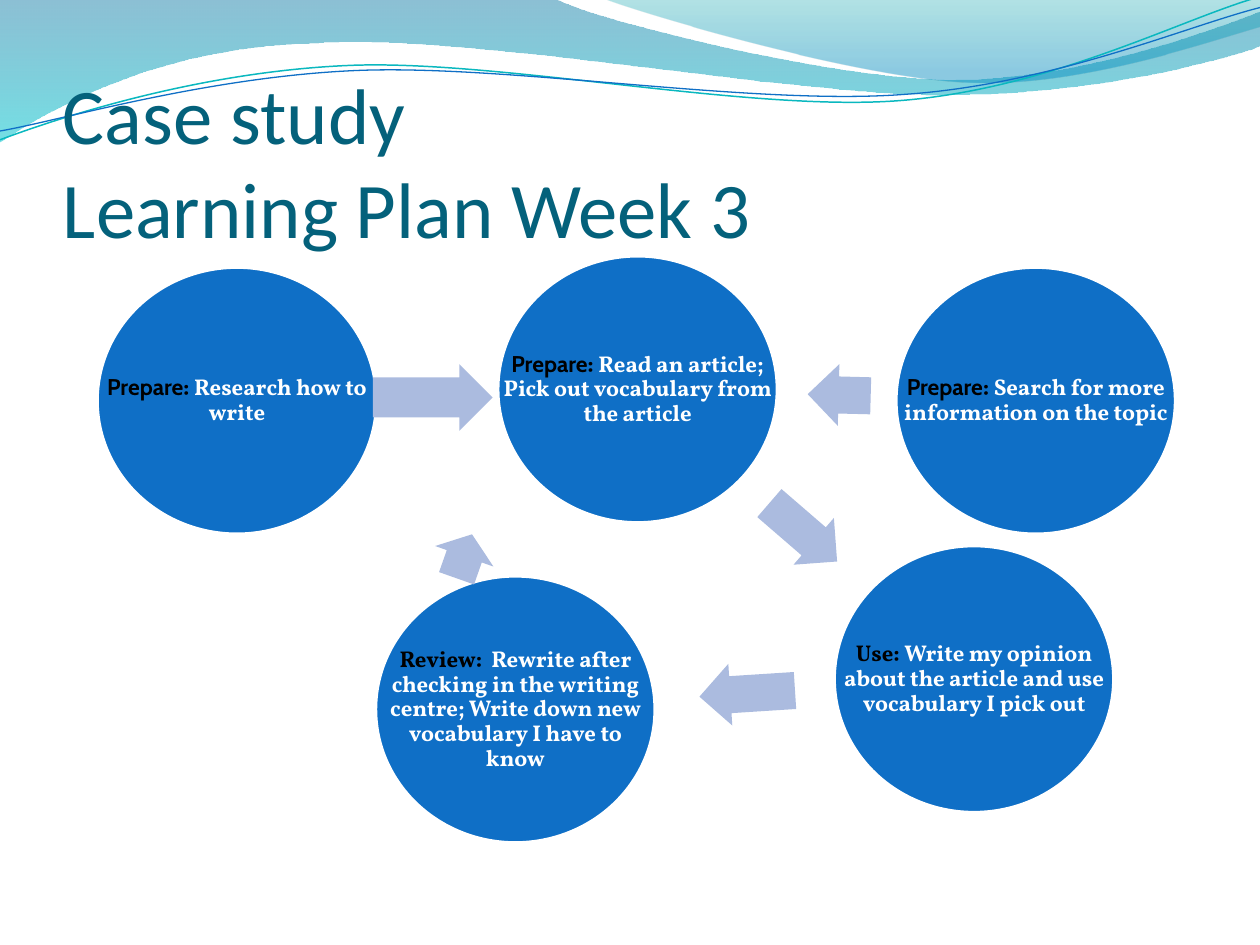
from dataclasses import dataclass
from lxml import etree
from pptx import Presentation
from pptx import util as u
from pptx.dml.color import RGBColor
from pptx.enum import shapes, text
from pptx.oxml.ns import qn


@dataclass(frozen=True)
class Theme:
    title: str = "04617B"
    circle: str = "0F6FC6"
    arrow: str = "ABBBDF"
    light: str = "FFFFFF"
    dark: str = "000000"
    teal_line: str = "0AB8BF"
    title_font: str = "Calibri"
    body_font: str = "Vollkorn"
    label_font: str = "Cabin"
    title_size: int = 45
    body_size: int = 13
    outline: float = 2
    long_wave: tuple = ((0, "0074A1", 45), (1, "00C6CF", 55))
    short_wave: tuple = ((0, "00A1A9", 30), (0.8, "008BBF", 45))


THEME = Theme()
COLUMNS, ROWS = 100, 75
CELL = u.Inches(0.1)
DIAMETERS = (22.2, 21.2)


def bends(*points):
    return [points[index:index + 3] for index in range(0, len(points), 3)]


class Page:
    def __init__(self, slide, theme):
        self.shapes = slide.shapes
        self.theme = theme

    def cells(self, *lengths):
        return [round(length * CELL) for length in lengths]

    def paint(self, shape, color):
        shape.shadow.inherit = False
        shape.fill.solid()
        shape.fill.fore_color.rgb = RGBColor.from_string(color)
        shape.line.fill.background()

    def outline(self, shape, color, width):
        shape.line.color.rgb = RGBColor.from_string(color)
        shape.line.width = u.Pt(width)

    def path_shape(self, start, segments, closed):
        builder = self.shapes.build_freeform(*self.cells(*start))
        points = [self.cells(*point) for segment in segments for point in segment]
        builder.add_line_segments(points, close=closed)
        shape = builder.convert_to_shape()
        shape.shadow.inherit = False
        lines = iter(list(shape.element.spPr.iter(qn("a:lnTo"))))
        for segment in segments:
            group = [next(lines) for _ in segment]
            if len(group) == 3:
                group[0].addprevious(bend := etree.Element(qn("a:cubicBezTo")))
                for line in group:
                    bend.append(line[0])
                    line.getparent().remove(line)
        return shape

    def wave(self, start, segments, stops):
        shape = self.path_shape(start, segments, True)
        shape.line.fill.background()
        shape.fill.gradient()
        shape.fill.gradient_angle = 270
        for stop, (position, color, _) in zip(shape.fill.gradient_stops, stops):
            stop.position = position
            stop.color.rgb = RGBColor.from_string(color)
        for node, (_, _, opacity) in zip(shape.element.spPr.iter(qn("a:srgbClr")), stops):
            etree.SubElement(node, qn("a:alpha")).set("val", str(opacity * 1000))

    def curve(self, start, segments, color, width):
        shape = self.path_shape(start, segments, False)
        shape.fill.background()
        self.outline(shape, color, width)

    def text_box(self, place, anchor, insets):
        frame = self.shapes.add_textbox(*self.cells(*place)).text_frame
        frame.word_wrap = True
        frame.vertical_anchor = anchor
        (frame.margin_left, frame.margin_top,
         frame.margin_right, frame.margin_bottom) = self.cells(*insets)
        return frame.paragraphs[0]

    def title(self, place, wording):
        para = self.text_box(place, text.MSO_ANCHOR.BOTTOM, (0, 0.5, 0, 0))
        para.text = wording
        para.font.name = self.theme.title_font
        para.font.size = u.Pt(self.theme.title_size)
        para.font.color.rgb = RGBColor.from_string(self.theme.title)

    def circle(self, corner, spans):
        place = (*corner, *DIAMETERS)
        shape = self.shapes.add_shape(shapes.MSO_SHAPE.OVAL, *self.cells(*place))
        self.paint(shape, self.theme.circle)
        self.outline(shape, self.theme.light, self.theme.outline)
        para = self.text_box(place, text.MSO_ANCHOR.MIDDLE, (0.2,) * 4)
        para.alignment = text.PP_ALIGN.CENTER
        para.line_spacing = 0.9
        para.font.size = u.Pt(self.theme.body_size)
        para.font.bold = True
        for wording, font, color in spans:
            span = para.add_run()
            span.text = wording
            span.font.name = font
            span.font.color.rgb = RGBColor.from_string(color)

    def arrow(self, place, angle):
        shape = self.shapes.add_shape(shapes.MSO_SHAPE.RIGHT_ARROW, *self.cells(*place))
        shape.adjustments[0], shape.adjustments[1] = 0.6, 0.5
        shape.rotation = angle
        self.paint(shape, self.theme.arrow)


def step_text(label, wording):
    body = (wording, THEME.body_font, THEME.light)
    if label == "Prepare":
        return [(label, THEME.label_font, THEME.dark), (": ", THEME.body_font, THEME.dark), body]
    return [(label, THEME.body_font, THEME.dark), body]


WAVES = [
    ((0, 0), [((44, -0.1),),
              *bends((47.6, 1.7), (66.4, 6.3), (75.8, 6.3),
                     (85.3, 6.3), (95.8, 2.6), (100, 0.9)),
              ((100.1, 3.6),),
              *bends((98.3, 4.4), (87, 7.6), (74.6, 7.5),
                     (62.2, 7.5), (38.2, 2.8), (25.7, 3.4),
                     (12.9, 3.6), (4.6, 8.3), (-0.1, 11.3))], THEME.long_wave),
    ((47.9, -0.1), [*bends((50.9, 1.1), (68.2, 6.2), (76.9, 6.5),
                           (85.6, 6.9), (96.1, 3.2), (100, 2.1)),
                    ((100, 0),)], THEME.short_wave),
]
CURVES = [
    ((0, 11.1), bends((4.8, 9.3), (15.8, 5.7), (27.7, 5.2), (39.5, 4.7), (59.3, 8.9),
                      (71.3, 8), (83.3, 7.1), (93.8, 1.5), (99.8, -0.2)),
     THEME.teal_line, 0.85),
    ((0, 10.4), bends((4.7, 9.6), (16.4, 6.1), (28.3, 5.6), (40.3, 5.1), (59.7, 8.4),
                      (71.7, 7.5), (83.6, 6.7), (94.1, 2.1), (100, 0.6)),
     THEME.circle, 0.75),
]
STEPS = [
    ((39.5, 20.3), "Prepare", "Read an article; Pick out vocabulary from the article",
     (60.2, 39.8, 7.1, 4.9), 40.8),
    ((66.2, 43.3), "Use: ", "Write my opinion about the article and use vocabulary I pick out",
     (55.5, 52.6, 7.6, 4.9), 176.3),
    ((29.8, 45.7), "Review:  ",
     "Rewrite after checking in the writing centre; Write down new vocabulary I have to know",
     (35, 41.7, 3.7, 4.9), 289.4),
    ((7.7, 21.2), "Prepare", "Research how to write", (29.6, 28.9, 9.5, 5.3), 0),
    ((71.1, 21.2), "Prepare", "Search for more information on the topic",
     (64.1, 28.9, 5, 4.9), 181.5),
]


def main():
    deck = Presentation()
    deck.slide_width, deck.slide_height = COLUMNS * CELL, ROWS * CELL
    page = Page(deck.slides.add_slide(deck.slide_layouts[6]), THEME)
    for start, segments, stops in WAVES:
        page.wave(start, segments, stops)
    for start, segments, color, width in CURVES:
        page.curve(start, segments, color, width)
    page.title((5, 7.7, 90, 12.5), "Case study\vLearning Plan Week 3")
    for corner, label, wording, arrow_place, angle in STEPS:
        page.circle(corner, step_text(label, wording))
        page.arrow(arrow_place, angle)
    deck.save("out.pptx")


if __name__ == "__main__":
    main()
